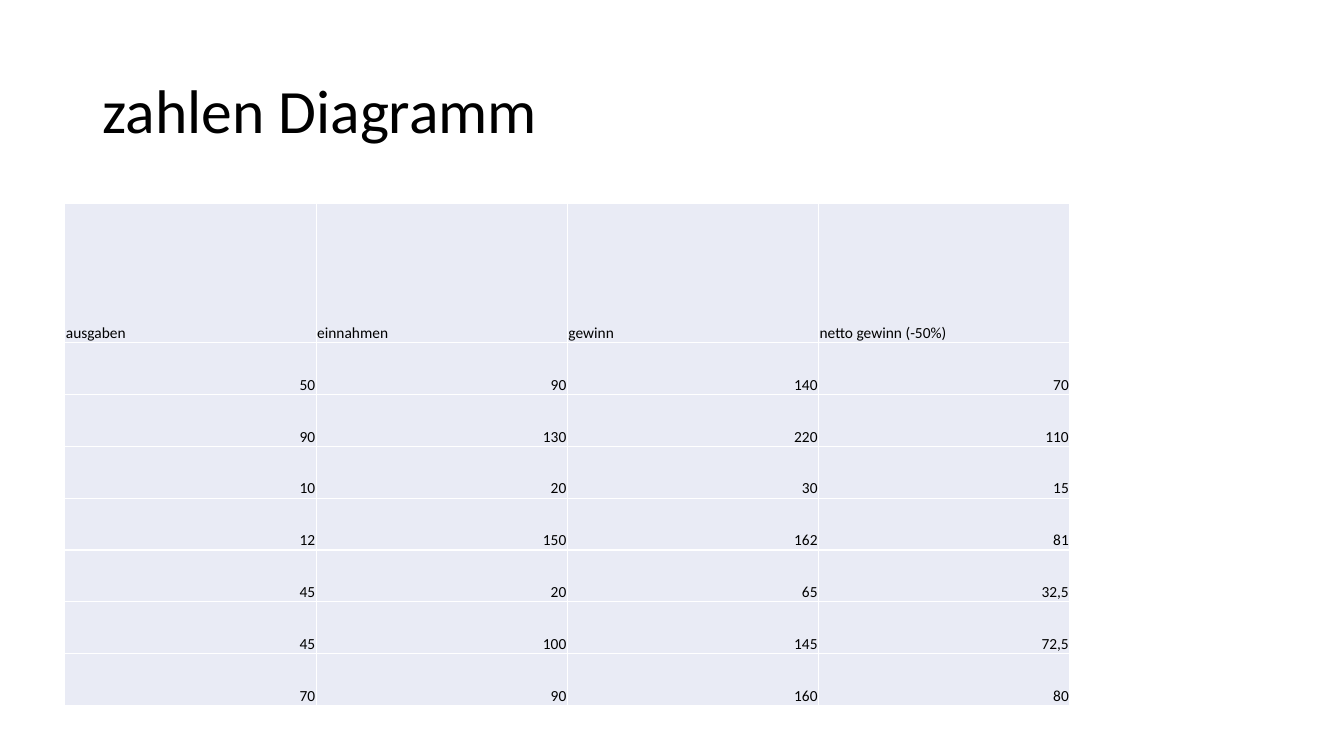
from lxml import etree
from pptx import Presentation
from pptx import util as u
from pptx.dml.color import RGBColor
from pptx.enum import text
from pptx.oxml import ns

WIDTH, HEIGHT = u.Inches(13.33), u.Inches(7.5)
FONT = "Calibri"
BLACK = RGBColor(0x00, 0x00, 0x00)
WHITE = RGBColor(0xFF, 0xFF, 0xFF)
PALE_BLUE = RGBColor(0xE9, 0xEB, 0xF5)

HEADERS = ["ausgaben", "einnahmen", "gewinn", "netto gewinn (-50%)"]
FIGURES = [
    ["50", "90", "140", "70"],
    ["90", "130", "220", "110"],
    ["10", "20", "30", "15"],
    ["12", "150", "162", "81"],
    ["45", "20", "65", "32,5"],
    ["45", "100", "145", "72,5"],
    ["70", "90", "160", "80"],
]
CELL_FORMAT = {
    "vertical_anchor": text.MSO_ANCHOR.BOTTOM,
    "margin_left": u.Inches(0.01),
    "margin_right": u.Inches(0.01),
    "margin_top": u.Inches(0.01),
    "margin_bottom": 0,
}
TITLE_FORMAT = {"word_wrap": True, "vertical_anchor": text.MSO_ANCHOR.MIDDLE}


def across(percent):
    return u.Emu(round(WIDTH * percent / 100))


def down(percent):
    return u.Emu(round(HEIGHT * percent / 100))


def set_attributes(target, values):
    for name, value in values.items():
        setattr(target, name, value)


def write(p, words, size, **paragraph_format):
    set_attributes(p, paragraph_format)
    r = p.add_run()
    r.text = words
    set_attributes(r.font, {"name": FONT, "size": u.Pt(size)})
    r.font.color.rgb = BLACK


def add_title(slide, words):
    sp = slide.shapes.add_textbox(across(6.88), down(5.33), across(86.25), down(19.33))
    tf = sp.text_frame
    set_attributes(tf, TITLE_FORMAT)
    write(tf.paragraphs[0], words, 44, line_spacing=0.9)


def add_borders(cell):
    # Borders come before the fill in the cell properties
    props = cell._tc.get_or_add_tcPr()
    for i, side in enumerate(("lnL", "lnR", "lnT", "lnB")):
        line = etree.Element(ns.qn(f"a:{side}"), w=str(u.Pt(1)))
        fill = etree.SubElement(line, ns.qn("a:solidFill"))
        etree.SubElement(fill, ns.qn("a:srgbClr"), val=str(WHITE))
        props.insert(i, line)


def fill_cell(cell, words, align):
    set_attributes(cell, CELL_FORMAT)
    cell.fill.solid()
    cell.fill.fore_color.rgb = PALE_BLUE
    add_borders(cell)
    write(cell.text_frame.paragraphs[0], words, 11, alignment=align)


def add_figures_table(slide):
    rows = [HEADERS] + FIGURES
    width, height, header_height = across(74.78), down(66.4), down(18.4)
    frame = slide.shapes.add_table(len(rows), len(HEADERS), across(4.83), down(26.93),
                                   width, height)
    table = frame.table
    set_attributes(table, {"first_row": False, "horz_banding": False})

    # Equal columns, a tall header and equal rows below it
    for column in table.columns:
        column.width = width // len(HEADERS)
    for row in table.rows:
        row.height = (height - header_height) // len(FIGURES)
    table.rows[0].height = header_height

    for i, row in enumerate(rows):
        align = text.PP_ALIGN.RIGHT if i else text.PP_ALIGN.LEFT
        for j, words in enumerate(row):
            fill_cell(table.cell(i, j), words, align)


def main():
    prs = Presentation()
    set_attributes(prs, {"slide_width": WIDTH, "slide_height": HEIGHT})
    slide = prs.slides.add_slide(prs.slide_layouts[6])
    add_title(slide, "zahlen Diagramm")
    add_figures_table(slide)
    prs.save("out.pptx")


if __name__ == "__main__":
    main()
